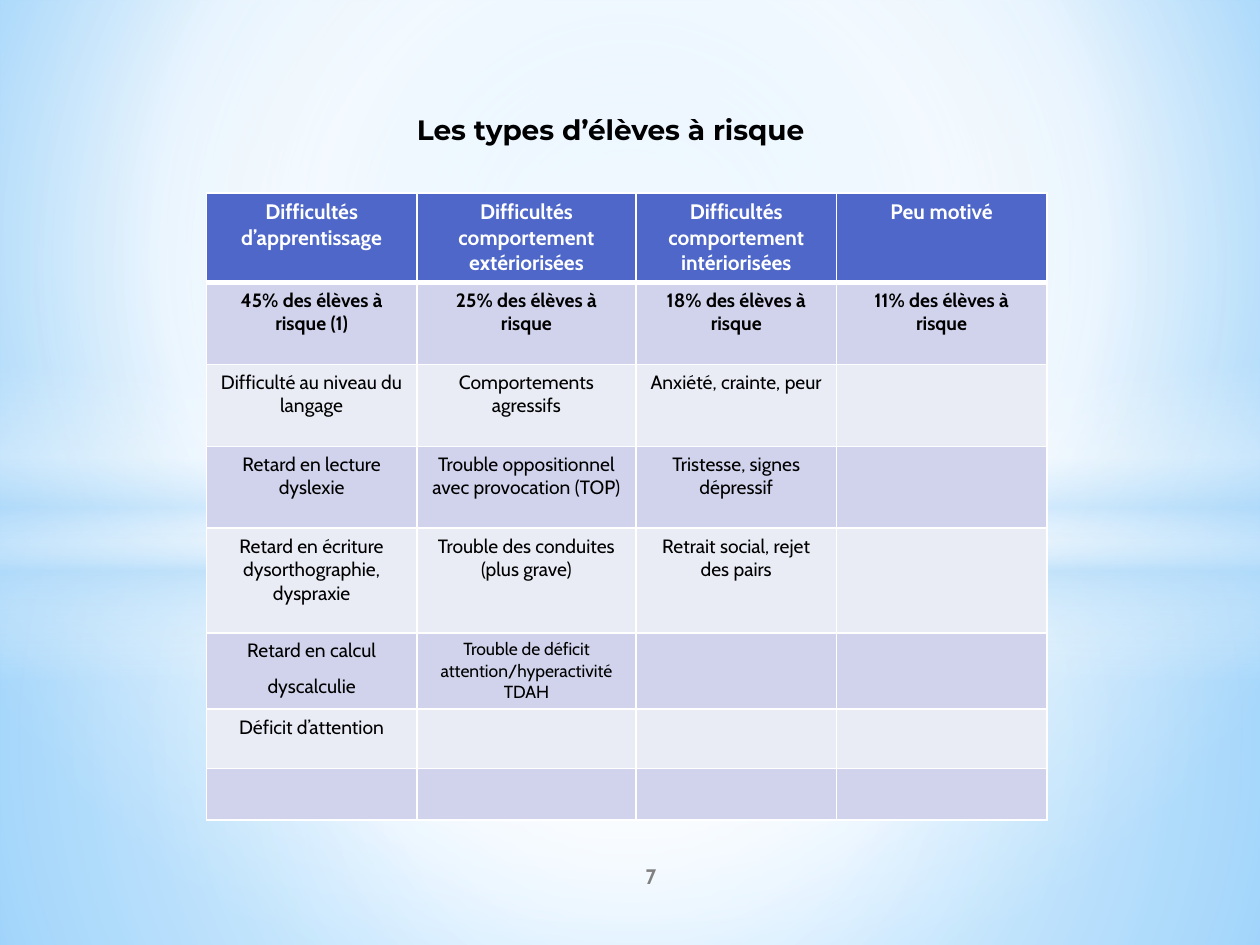
from pptx import Presentation
from pptx import oxml, util as u
from pptx.dml.color import RGBColor
from pptx.enum import shapes, text
from pptx.oxml.ns import nsdecls, qn

Pt = u.Pt
BODY_FONT, TITLE_FONT = "Cabin", "Montserrat"
WHITE, BLACK, SKY = "FFFFFF", "000000", "B4DCFA"
HEADER_FILL, BANDS = "4E67C8", ("E9EBF5", "D0D3EB")

COLUMNS = (120.2, 125.3, 114.5, 120.2)
ROWS = (50.4, 46.8, 46.8, 46.8, 59.8, 43.2, 33.8, 29.5)
RISKS = [
    ["Difficultés d’apprentissage", "Difficultés comportement extériorisées",
     "Difficultés comportement intériorisées", "Peu motivé"],
    ["45% des élèves à risque (1)", "25% des élèves à risque",
     "18% des élèves à risque", "11% des élèves à risque"],
    ["Difficulté au niveau du langage", "Comportements agressifs",
     "Anxiété, crainte, peur", ""],
    ["Retard en lecture dyslexie", "Trouble oppositionnel avec provocation (TOP)",
     "Tristesse, signes dépressif", ""],
    ["Retard en écriture dysorthographie, dyspraxie",
     "Trouble des conduites (plus grave)", "Retrait social, rejet\vdes pairs", ""],
    ["Retard en calcul\ndyscalculie",
     "Trouble de déficit\nattention/hyperactivité\vTDAH", "", ""],
    ["Déficit d’attention", "", "", ""],
    ["", "", "", ""],
]


def color(value):
    """Turn a hex string into a colour."""
    return RGBColor.from_string(value)


def set_gradient(fill, owner, stops, path_to=None, angle=0):
    """Give owner a gradient of (position, hex, opacity) stops, radial or linear."""
    fill.background()
    marks = "".join(
        f'<a:gs pos="{pos * 1000}"><a:srgbClr val="{value}">'
        f'<a:alpha val="{opacity * 1000}"/></a:srgbClr></a:gs>'
        for pos, value, opacity in stops)
    if path_to:
        left, top, right, bottom = (side * 1000 for side in path_to)
        shade = (f'<a:path path="circle"><a:fillToRect l="{left}" t="{top}" '
                 f'r="{right}" b="{bottom}"/></a:path>')
    else:
        shade = f'<a:lin ang="{angle * 60000}" scaled="0"/>'
    gradient = oxml.parse_xml(
        f'<a:gradFill {nsdecls("a")} rotWithShape="1"><a:gsLst>{marks}</a:gsLst>'
        f'{shade}</a:gradFill>')
    owner.replace(owner.find(qn("a:noFill")), gradient)


def write(paragraph, words, font, size, ink, bold):
    """Write centred words, with a line break at each vertical tab."""
    paragraph.alignment = text.PP_ALIGN.CENTER
    for index, line in enumerate(words.split("\v")):
        if index:
            paragraph.add_line_break()
        run = paragraph.add_run()
        run.text = line
        run.font.name, run.font.size, run.font.bold = font, Pt(size), bold
        run.font.color.rgb = color(ink)


def add_backdrop(slide, width, height):
    """Lay the sky glow over the whole slide."""
    fill = slide.background.fill
    fill.background()
    set_gradient(fill, slide.element.find(".//" + qn("p:bgPr")),
                 [(0, "9ED5FF", 100), (60, WHITE, 100), (100, "5BB9FF", 100)],
                 (20, 10, 20, 60))
    center = (50, 50, 50, 50)
    rect, oval = shapes.MSO_SHAPE.RECTANGLE, shapes.MSO_SHAPE.OVAL
    horizon = 304.6
    glows = [
        (rect, horizon, height - horizon,
         [(0, WHITE, 91), (37, WHITE, 76), (100, SKY, 79)], center),
        (rect, 0, horizon, [(0, WHITE, 89), (48, WHITE, 62), (100, SKY, 79)], center),
        (rect, 208.8, 180, [(0, WHITE, 0), (29, WHITE, 30), (45, SKY, 40),
                            (55, WHITE, 26), (65, SKY, 60), (100, WHITE, 0)], None),
        (oval, 126, 401.8, [(0, WHITE, 100), (54, WHITE, 0)], center),
    ]
    for kind, top, depth, stops, path_to in glows:
        glow = slide.shapes.add_shape(kind, 0, Pt(top), Pt(width), Pt(depth))
        glow.shadow.inherit = False
        glow.line.fill.background()
        set_gradient(glow.fill, glow.element.spPr, stops, path_to, angle=90)


def add_title(slide, left, top, width, height):
    """Place the slide title in front of the backdrop."""
    title = slide.shapes.title
    title.element.getparent().append(title.element)
    title.left, title.top = Pt(left), Pt(top)
    title.width, title.height = Pt(width), Pt(height)
    frame = title.text_frame
    frame.word_wrap = True
    frame.auto_size = text.MSO_AUTO_SIZE.NONE
    frame.vertical_anchor = text.MSO_ANCHOR.TOP
    write(frame.paragraphs[0], "Les types d’élèves à risque", TITLE_FONT, 16, BLACK, True)


def add_page_number(slide, left, top, width, height):
    """Place the page number."""
    frame = slide.shapes.add_textbox(Pt(left), Pt(top), Pt(width), Pt(height)).text_frame
    frame.word_wrap = True
    frame.vertical_anchor = text.MSO_ANCHOR.MIDDLE
    write(frame.paragraphs[0], "7", BODY_FONT, 12, "808080", True)


def set_borders(cell, weights):
    """Draw white cell borders from a side-to-points mapping."""
    properties = cell._tc.get_or_add_tcPr()
    for side, weight in weights.items():
        properties.append(oxml.parse_xml(
            f'<a:ln{side} {nsdecls("a")} w="{Pt(weight)}"><a:solidFill>'
            f'<a:srgbClr val="{WHITE}"/></a:solidFill></a:ln{side}>'))


def add_risk_table(slide, left, top):
    """Place the table of risk types."""
    table = slide.shapes.add_table(len(ROWS), len(COLUMNS), Pt(left), Pt(top),
                                   Pt(sum(COLUMNS)), Pt(sum(ROWS))).table
    for column, width in zip(table.columns, COLUMNS):
        column.width = Pt(width)
    for r, (entries, height) in enumerate(zip(RISKS, ROWS)):
        table.rows[r].height = Pt(height)
        for c, entry in enumerate(entries):
            cell = table.cell(r, c)
            set_borders(cell, {"L": 1, "R": 1, "T": 3 if r == 1 else 1,
                               "B": 3 if r == 0 else 1})
            cell.fill.solid()
            cell.fill.fore_color.rgb = color(BANDS[r % 2] if r else HEADER_FILL)
            size = 12 if r == 0 else 10 if (r, c) == (5, 1) else 11
            frame = cell.text_frame
            for index, words in enumerate(entry.split("\n")):
                paragraph = frame.add_paragraph() if index else frame.paragraphs[0]
                if words:
                    write(paragraph, words, BODY_FONT, size, BLACK if r else WHITE, r < 2)
                else:
                    paragraph.font.size = Pt(size)
                if words == "dyscalculie":
                    paragraph.space_before = Pt(7)


def main():
    """Build and save the slide."""
    width, height = 720, 540
    deck = Presentation()
    deck.slide_width, deck.slide_height = Pt(width), Pt(height)
    slide = deck.slides.add_slide(deck.slide_layouts[5])
    add_backdrop(slide, width, height)
    add_page_number(slide, 300, 486, 144, 28.8)
    add_title(slide, 68, 60.5, 562, 26.6)
    add_risk_table(slide, 118, 110.2)
    deck.save("out.pptx")


if __name__ == "__main__":
    main()
